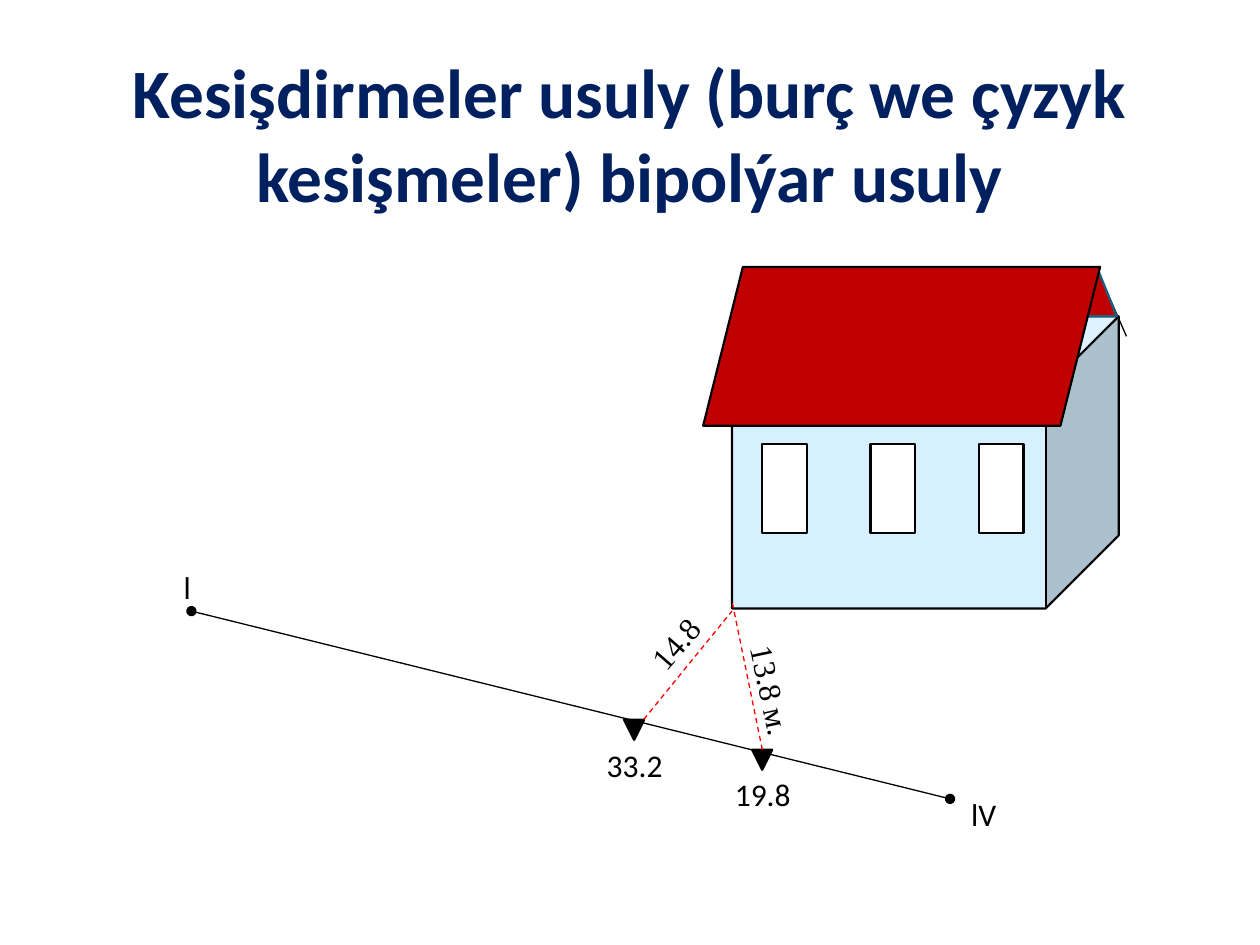
from lxml import etree
from pptx import Presentation
from pptx.dml.color import RGBColor
from pptx.enum import dml, shapes, text
from pptx.oxml.ns import qn
from pptx.util import Pt

BLACK, RED, NAVY = "000000", "FF0000", "002060"
WALL, ROOF, GLASS, GABLE_EDGE = "D6F0FF", "C00000", "FFFFFF", "195F84"
SHAPE = shapes.MSO_SHAPE


def rgb(value):
    return RGBColor.from_string(value)


def add_solid(slide, kind, box, fill, line=BLACK, rotation=0):
    shape = slide.shapes.add_shape(kind, *map(Pt, box))
    shape.shadow.inherit = False
    shape.rotation = rotation
    shape.fill.solid()
    shape.fill.fore_color.rgb = rgb(fill)
    shape.line.color.rgb = rgb(line)
    shape.line.width = Pt(1.25)


def add_line(slide, start, end, color=BLACK, dashed=False, dots=False):
    """Draw a thin line, optionally dashed or with a dot at each end."""
    line = slide.shapes.add_connector(
        shapes.MSO_CONNECTOR.STRAIGHT, *map(Pt, (*start, *end)))
    line.line.color.rgb = rgb(color)
    line.line.width = Pt(0.75)
    if dashed:
        line.line.dash_style = dml.MSO_LINE.DASH
    if dots:
        outline = line.line._get_or_add_ln()
        for tag in ("a:headEnd", "a:tailEnd"):
            etree.SubElement(outline, qn(tag), type="oval")
    etree.SubElement(line._element.spPr, qn("a:effectLst"))


def add_label(slide, words, box, font="Calibri", size=18, color=BLACK, bold=False,
              align=text.PP_ALIGN.LEFT, anchor=text.MSO_ANCHOR.TOP,
              rotation=0, inset=7.2):
    label = slide.shapes.add_textbox(*map(Pt, box))
    label.rotation = rotation
    frame = label.text_frame
    frame.word_wrap = True
    frame.vertical_anchor = anchor
    frame.margin_left = Pt(inset)
    frame.text = words
    paragraph = frame.paragraphs[0]
    paragraph.alignment = align
    run_font = paragraph.runs[0].font
    run_font.name, run_font.size, run_font.bold = font, Pt(size), bold
    run_font.color.rgb = rgb(color)


def add_house_walls(slide):
    add_solid(slide, SHAPE.CUBE, (418.3, 180.7, 221, 167), WALL)
    for column in range(3):
        left = 435.6 + column * 61.9
        add_solid(slide, SHAPE.RECTANGLE, (left, 253.6, 25.5, 51), GLASS)


def add_house_roof(slide):
    add_line(slide, (626.4, 152.6), (643.7, 192.2))
    add_solid(slide, SHAPE.ISOSCELES_TRIANGLE, (615.6, 152.6, 22.5, 28.1),
              ROOF, GABLE_EDGE)
    add_solid(slide, SHAPE.PARALLELOGRAM, (401.8, 152.6, 226.8, 90.7), ROOF)


def add_station(slide, left, top, distance):
    """Mark a point on the survey line with its distance below."""
    add_solid(slide, SHAPE.ISOSCELES_TRIANGLE, (left, top, 11.5, 11.5),
              BLACK, rotation=180)
    add_label(slide, distance, (left - 17, top + 11.2, 84, 29))


def main():
    presentation = Presentation()
    presentation.slide_width, presentation.slide_height = Pt(720), Pt(540)
    slide = presentation.slides.add_slide(presentation.slide_layouts[6])

    add_label(slide, "Kesişdirmeler usuly (burç we çyzyk kesişmeler) bipolýar usuly",
              (36, 26.6, 648, 98.6), size=39.6, color=NAVY, bold=True,
              align=text.PP_ALIGN.CENTER, anchor=text.MSO_ANCHOR.MIDDLE)
    add_house_walls(slide)
    add_house_roof(slide)

    add_line(slide, (542.9, 456.5), (109.4, 349.2), dots=True)
    add_label(slide, "l", (97.9, 321.1, 33.8, 29))
    add_label(slide, "lV", (547.9, 450.7, 39.6, 29))
    add_station(slide, 429.8, 428.4, "19.8")
    add_station(slide, 356.6, 411.3, "33.2")

    add_line(slide, (435.6, 428.4), (418.3, 343.4), RED, dashed=True)
    add_line(slide, (367.9, 411.1), (418.3, 349.2), RED, dashed=True)
    add_label(slide, "13.8 м.", (399.6, 384.5, 84.2, 29), "Times New Roman",
              rotation=77.9, inset=11.7)
    add_label(slide, "14.8", (349.2, 334.1, 106.6, 29), "Times New Roman",
              rotation=311, inset=12.2)
    presentation.save("out.pptx")


if __name__ == "__main__":
    main()
